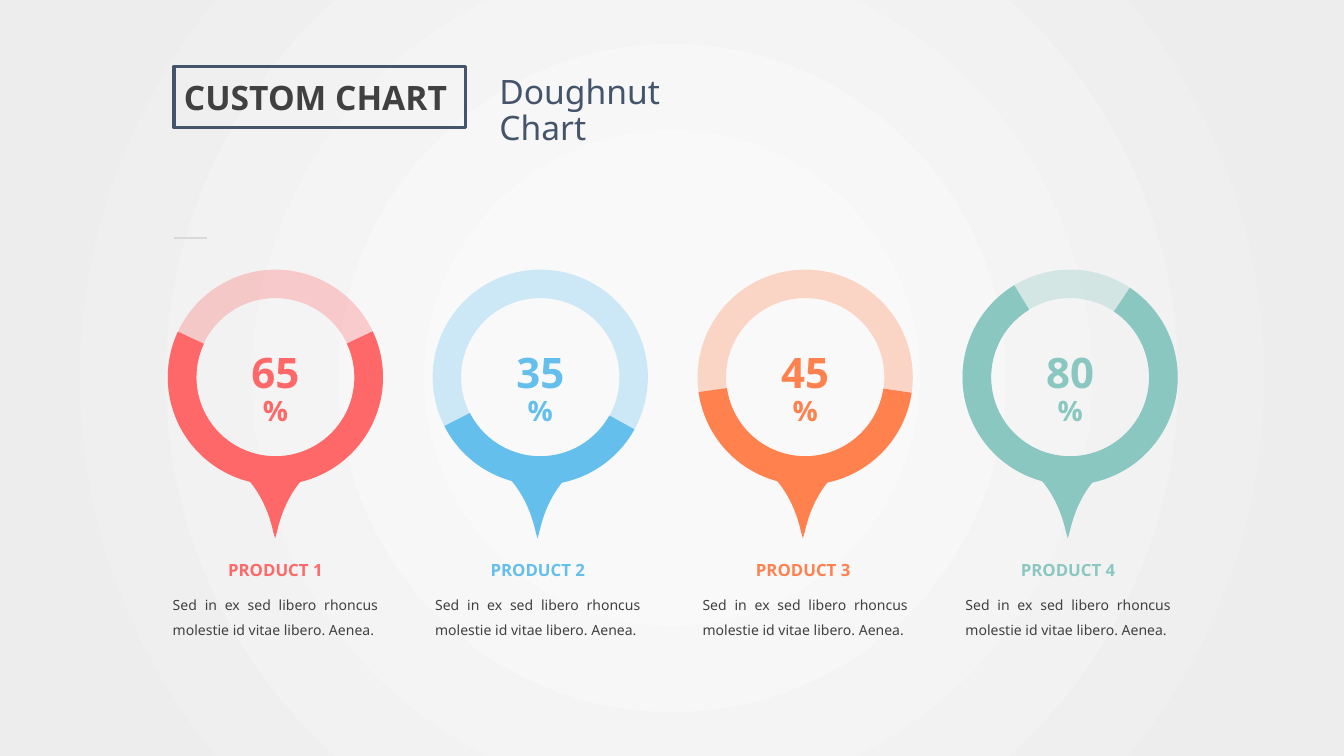
from dataclasses import dataclass

from lxml import etree
from pptx import Presentation
from pptx.dml.color import RGBColor
from pptx.enum.shapes import MSO_CONNECTOR, MSO_SHAPE
from pptx.enum.text import MSO_ANCHOR, PP_ALIGN
from pptx.oxml.ns import qn
from pptx.util import Inches, Pt

RECTANGLE = MSO_SHAPE.RECTANGLE
DONUT = MSO_SHAPE.DONUT
BLOCK_ARC = MSO_SHAPE.BLOCK_ARC
STRAIGHT = MSO_CONNECTOR.STRAIGHT
MIDDLE = MSO_ANCHOR.MIDDLE
LEFT, CENTER, JUSTIFY = PP_ALIGN.LEFT, PP_ALIGN.CENTER, PP_ALIGN.JUSTIFY

CORAL = RGBColor(0xFE, 0x68, 0x69)
BLUE = RGBColor(0x64, 0xBF, 0xEC)
ORANGE = RGBColor(0xFF, 0x81, 0x4E)
TEAL = RGBColor(0x8A, 0xC7, 0xC0)
NAVY = RGBColor(0x44, 0x54, 0x6A)
CHARCOAL = RGBColor(0x40, 0x40, 0x40)
RULE_GRAY = RGBColor(0xD9, 0xD9, 0xD9)
CENTER_GRAY = RGBColor(0xF9, 0xF9, 0xF9)
EDGE_GRAY = RGBColor(0xED, 0xED, 0xED)

FONT = "Noto Sans"
SLIDE_WIDTH, SLIDE_HEIGHT = 26.67, 15
FIRST_LEFT, LAST_LEFT = 3.33, 19.1
RING_TOP, RING_SIZE = 5.35, 4.27
TRACK_OPACITY = 30
CURVE_STEPS = 20
DESCRIPTION = "Sed in ex sed libero rhoncus molestie id vitae libero. Aenea."


@dataclass
class Product:
    percent: int
    color: RGBColor
    arc_start: float
    rotation: float
    pointer_shift: float
    body_shift: float


PRODUCTS = [
    Product(65, CORAL, 79.64, 22, 0, 0),
    Product(35, BLUE, 143.39, 330, -0.05, -0.05),
    Product(45, ORANGE, 119.59, 349, -0.04, 0),
    Product(80, TEAL, 40.8, 55.7, -0.04, -0.04),
]


def inches(*lengths):
    return [Inches(length) for length in lengths]


def paint(shape, color):
    shape.shadow.inherit = False
    shape.fill.solid()
    shape.fill.fore_color.rgb = color
    shape.line.fill.background()


def style(paragraph, size, color, bold=False, alignment=LEFT, spacing=1.0):
    paragraph.alignment = alignment
    paragraph.line_spacing = spacing
    font = paragraph.font
    font.name, font.size, font.bold = FONT, Pt(size), bold
    font.color.rgb = color


def add_text(slide, box, text, size, color, wrap=True, **options):
    frame = slide.shapes.add_textbox(*inches(*box)).text_frame
    frame.word_wrap = wrap
    paragraph = frame.paragraphs[0]
    paragraph.text = text
    style(paragraph, size, color, **options)
    return paragraph


def add_background(slide):
    fill = slide.background.fill
    fill.gradient()
    stops = zip(fill.gradient_stops, (0.21, 0.88), (CENTER_GRAY, EDGE_GRAY))
    for stop, position, color in stops:
        stop.position = position
        stop.color.rgb = color
    gradient = slide.background._cSld.find(".//" + qn("a:gradFill"))
    gradient.remove(gradient.find(qn("a:lin")))
    path = etree.SubElement(gradient, qn("a:path"), path="circle")
    sides = dict.fromkeys("ltrb", "50000")
    etree.SubElement(path, qn("a:fillToRect"), **sides)


def add_header(slide, left, top):
    title = slide.shapes.add_shape(RECTANGLE, *inches(left, top, 5.79, 1.21))
    title.shadow.inherit = False
    title.fill.background()
    title.line.color.rgb = NAVY
    title.line.width = Pt(5)
    frame = title.text_frame
    frame.word_wrap = False
    frame.vertical_anchor = MIDDLE
    frame.margin_left = frame.margin_right = Inches(0.2)
    frame.margin_top = frame.margin_bottom = Inches(0.2)
    paragraph = frame.paragraphs[0]
    paragraph.text = "CUSTOM CHART"
    style(paragraph, 48, CHARCOAL, bold=True)

    add_text(slide, (left + 6.36, top + 0.13, 3.91, 0.91), "Doughnut Chart",
             48, NAVY, wrap=False, spacing=0.9)

    rule_top = top + 3.41
    rule = slide.shapes.add_connector(
        STRAIGHT, *inches(left, rule_top, left + 0.65, rule_top))
    rule.line.color.rgb = RULE_GRAY
    rule.line.width = Pt(3)
    etree.SubElement(rule._element.spPr, qn("a:effectLst"))


def add_pointer(slide, left, top, width, height, color):
    side = []
    for step in range(CURVE_STEPS + 1):
        t = step / CURVE_STEPS
        pull = 3 * (1 - t) * t ** 2
        side.append((0.7 * pull + 0.96 * t ** 3, 0.225 * pull + 0.92 * t ** 3))
    mirrored = [(2 - x, y) for x, y in reversed(side)]
    points = [inches(left + x * width / 2, top + y * height)
              for x, y in side + [(1, 1)] + mirrored]
    builder = slide.shapes.build_freeform(*points[0])
    builder.add_line_segments(points[1:], close=True)
    paint(builder.convert_to_shape(), color)


def add_ring(slide, left, top, size, product):
    box = inches(left, top, size, size)
    track = slide.shapes.add_shape(DONUT, *box)
    track.adjustments[0] = 0.132
    paint(track, product.color)
    color = track._element.spPr.find(".//" + qn("a:srgbClr"))
    etree.SubElement(color, qn("a:alpha"), val=str(TRACK_OPACITY * 1000))

    arc = slide.shapes.add_shape(BLOCK_ARC, *box)
    for index, value in enumerate((product.arc_start, 1.83, 0.133)):
        arc.adjustments[index] = value
    arc.rotation = product.rotation
    transform = arc._element.spPr.find(qn("a:xfrm"))
    transform.set("flipH", "1")
    transform.set("flipV", "1")
    paint(arc, product.color)


def add_product(slide, left, top, size, number, product):
    pointer_left = left + product.pointer_shift
    add_pointer(slide, pointer_left + 1.3, top + 3.91, 1.66, 1.42, product.color)
    add_ring(slide, left, top, size, product)

    value = add_text(slide, (left + 1.31, top + 1.58, 1.65, 1.11),
                     str(product.percent), 60, product.color, wrap=False,
                     bold=True, alignment=CENTER, spacing=0.9)
    value.add_line_break()
    sign = value.add_run()
    sign.text = "%"
    sign.font.size = Pt(40)

    add_text(slide, (pointer_left, top + 5.7, size, 0.5), f"PRODUCT {number}",
             24, product.color, bold=True, alignment=CENTER)
    add_text(slide, (left + product.body_shift, top + 6.27, size, 1.06),
             DESCRIPTION, 20, CHARCOAL, alignment=JUSTIFY, spacing=1.5)


def main():
    presentation = Presentation()
    presentation.slide_width = Inches(SLIDE_WIDTH)
    presentation.slide_height = Inches(SLIDE_HEIGHT)
    slide = presentation.slides.add_slide(presentation.slide_layouts[6])
    add_background(slide)
    pitch = (LAST_LEFT - FIRST_LEFT) / (len(PRODUCTS) - 1)
    for index, product in enumerate(PRODUCTS):
        add_product(slide, FIRST_LEFT + index * pitch, RING_TOP, RING_SIZE,
                    index + 1, product)
    add_header(slide, 3.45, 1.32)
    presentation.save("out.pptx")


if __name__ == "__main__":
    main()
